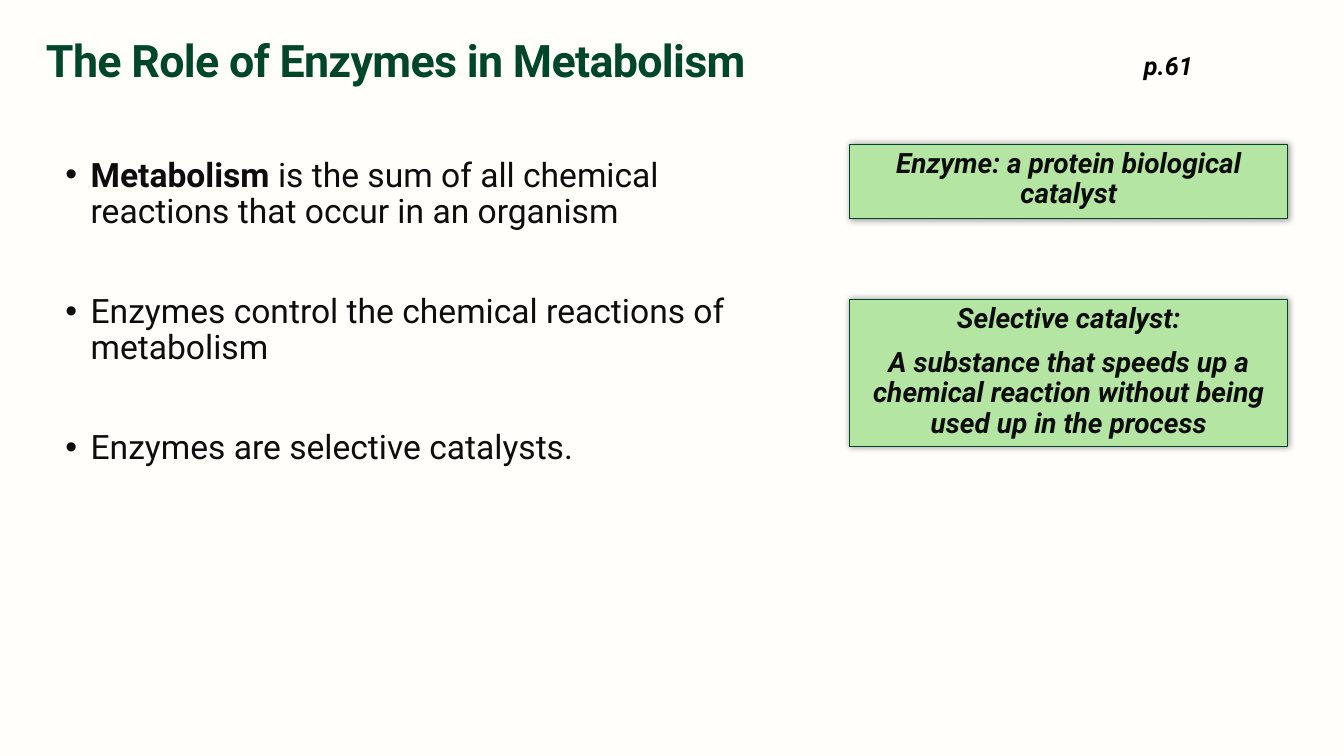
from lxml import etree
from pptx import Presentation
from pptx.dml.color import RGBColor
from pptx.enum.shapes import MSO_SHAPE
from pptx.enum.text import MSO_ANCHOR, PP_ALIGN
from pptx.oxml import parse_xml
from pptx.oxml.ns import nsdecls, qn
from pptx.util import Cm, Pt

RECTANGLE = MSO_SHAPE.RECTANGLE
TOP = MSO_ANCHOR.TOP
LEFT, CENTER = PP_ALIGN.LEFT, PP_ALIGN.CENTER

CREAM = RGBColor(0xFF, 0xFE, 0xFA)
DARK_GREEN = RGBColor(0x00, 0x47, 0x2A)
LIGHT_GREEN = RGBColor(0xB4, 0xE5, 0xA2)
INK = RGBColor(0x0D, 0x0D, 0x0D)
BLACK = RGBColor(0x00, 0x00, 0x00)
FONT = "Roboto"


def add_para(frame, index, align=LEFT, space_before=0):
    """Return a paragraph of the frame, spaced from the one above it."""
    para = frame.add_paragraph() if index else frame.paragraphs[0]
    para.alignment = align
    para.line_spacing = 0.9
    para.space_before = Pt(space_before if index else 0)
    return para


def add_span(para, text, size, color, bold=False, italic=False):
    span = para.add_run()
    span.text = text
    span.font.name = FONT
    span.font.size = Pt(size)
    span.font.bold = bold
    span.font.italic = italic
    span.font.color.rgb = color
    return span


deck = Presentation()
deck.slide_width, deck.slide_height = Cm(33.87), Cm(19.05)
page = deck.slides.add_slide(deck.slide_layouts[6])
page.background.fill.solid()
page.background.fill.fore_color.rgb = CREAM

# Title
title_box = page.shapes.add_textbox(Cm(0.91), Cm(0.86), Cm(25.65), Cm(2.26))
title_box.text_frame.word_wrap = True
title = add_span(add_para(title_box.text_frame, 0),
                 "The Role of Enzymes in Metabolism", 32, DARK_GREEN, bold=True)
title.font._element.set("spc", "-50")

# Page reference
reference_box = page.shapes.add_textbox(Cm(28.58), Cm(1.24), Cm(2.44), Cm(1.88))
reference_box.text_frame.word_wrap = True
add_span(add_para(reference_box.text_frame, 0), "p.61", 18, BLACK,
         bold=True, italic=True)

# Bulleted points, each a list of (text, bold)
points = [
    [("Metabolism", True),
     (" is the sum of all chemical reactions that occur in an organism", False)],
    [("Enzymes control the chemical reactions of metabolism", False)],
    [("Enzymes are selective catalysts.", False)],
]
points_box = page.shapes.add_textbox(Cm(1.4), Cm(3.86), Cm(17.48), Cm(12.09))
points_box.text_frame.word_wrap = True
for index, point in enumerate(points):
    para = add_para(points_box.text_frame, index, space_before=45.5)
    properties = para._p.get_or_add_pPr()
    properties.set("marL", str(Cm(0.635)))
    properties.set("indent", str(-Cm(0.635)))
    etree.SubElement(properties, qn("a:buFont")).set("typeface", "Arial")
    etree.SubElement(properties, qn("a:buChar")).set("char", "•")
    for text, bold in point:
        add_span(para, text, 24, INK, bold=bold)

# Definition boxes: top, height, paragraphs
definitions = [
    (3.63, 1.88, ["Enzyme: a protein biological catalyst"]),
    (7.54, 3.71, ["Selective catalyst:",
                  "A substance that speeds up a chemical reaction "
                  "without being used up in the process"]),
]
for top, height, texts in definitions:
    box = page.shapes.add_shape(RECTANGLE, Cm(21.41), Cm(top), Cm(11.05), Cm(height))
    box.fill.solid()
    box.fill.fore_color.rgb = LIGHT_GREEN
    box.line.color.rgb = DARK_GREEN
    box.line.width = Pt(0.75)
    # Soft glow-like shadow on all sides
    box._element.spPr.append(parse_xml(
        f'<a:effectLst {nsdecls("a")}>'
        f'<a:outerShdw blurRad="{Pt(5)}" dist="0" dir="0" algn="ctr" rotWithShape="0">'
        f'<a:srgbClr val="{BLACK}"><a:alpha val="40000"/></a:srgbClr>'
        '</a:outerShdw></a:effectLst>'))
    box.text_frame.word_wrap = True
    box.text_frame.vertical_anchor = TOP
    for index, text in enumerate(texts):
        para = add_para(box.text_frame, index, CENTER, space_before=10)
        add_span(para, text, 20, INK, bold=True, italic=True)

deck.save("out.pptx")
